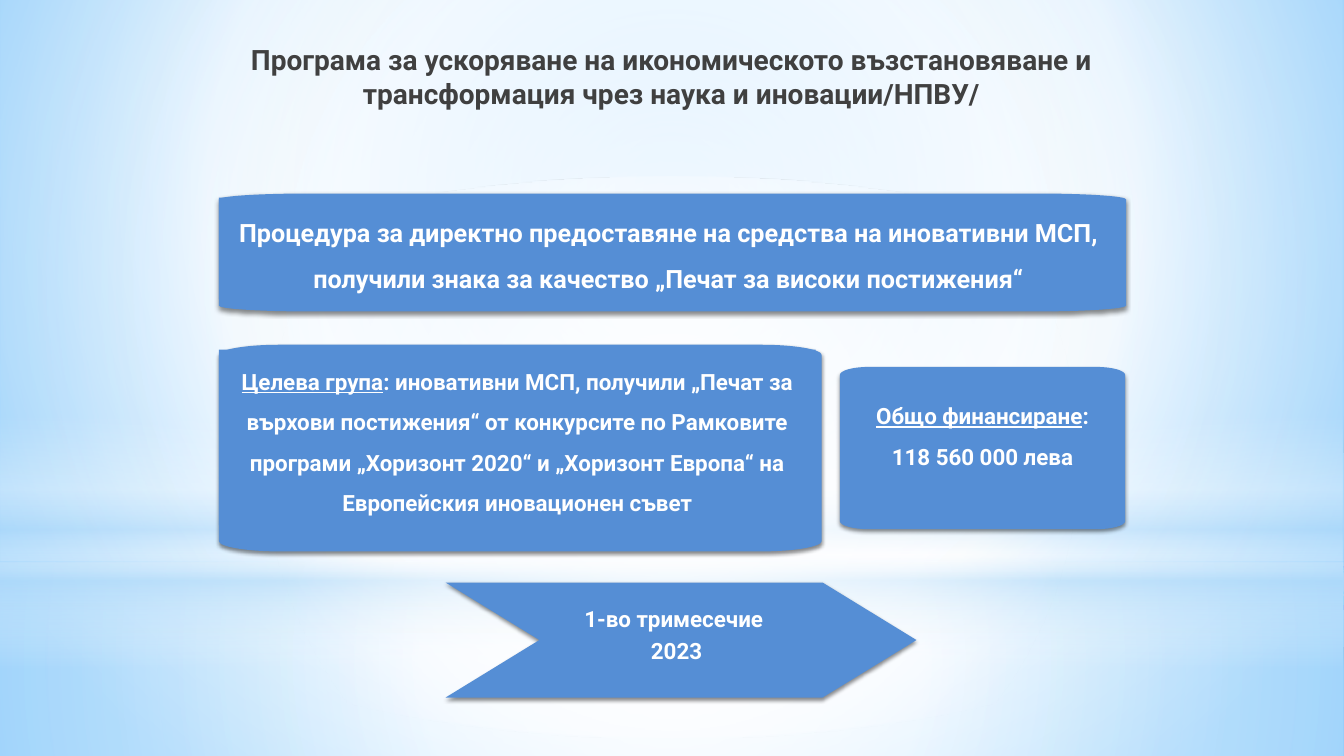
from dataclasses import dataclass

from lxml import etree
from pptx import Presentation
from pptx import util as u
from pptx.dml.color import RGBColor
from pptx.enum import shapes, text
from pptx.oxml import ns


@dataclass(frozen=True)
class Theme:
    font: str = "Roboto"
    title: str = "404040"
    panel: str = "558ED5"
    on_panel: str = "FFFFFF"
    shadow: str = "000000"
    white: str = "FFFFFF"
    mist: str = "B4DCFA"
    sky: str = "9ED5FF"
    deep_sky: str = "5BB9FF"
    title_size: int = 20
    lead_size: int = 18
    body_size: int = 16


THEME = Theme()
SIZE = (13.33, 7.5)
TITLE = ("Програма за ускоряване на икономическото възстановяване и "
         "трансформация чрез наука и иновации/НПВУ/")
TITLE_AREA = (2.33, 0.38, 8.66, 0.79)

# Gradient stops are (position %, colour, opacity %);
# the focus is left, top, right, bottom in %, or None for a vertical blend.
CENTRE = (50, 50, 50, 50)
BACKDROP = ([(0, THEME.sky, 100), (60, THEME.white, 100), (100, THEME.deep_sky, 100)],
            (20, 10, 20, 60))
RECT, OVAL = shapes.MSO_SHAPE.RECTANGLE, shapes.MSO_SHAPE.OVAL
GLOWS = [
    (RECT, (0, 5.58, 13.33, 1.92),
     [(0, THEME.white, 91), (37, THEME.white, 76), (100, THEME.mist, 79)], CENTRE),
    (RECT, (0, 0, 13.33, 5.58),
     [(0, THEME.white, 89), (48, THEME.white, 62), (100, THEME.mist, 79)], CENTRE),
    (RECT, (0, 4.12, 13.33, 2.5),
     [(0, THEME.white, 0), (29, THEME.white, 30), (45, THEME.mist, 40),
      (55, THEME.white, 26), (65, THEME.mist, 60), (100, THEME.white, 0)], None),
    (OVAL, (0, 1.75, 13.33, 5.58),
     [(0, THEME.white, 100), (56, THEME.white, 0)], CENTRE),
]

# Panel area, label area, size, paragraphs of (wording, underlined) runs.
PANELS = [
    ((2.17, 1.92, 9, 1.17), (2.17, 1.96, 8.92, 1.01), THEME.lead_size,
     [[("Процедура за директно предоставяне на средства на иновативни МСП, "
        "получили знака за качество „Печат за високи постижения“", False)]]),
    ((2.17, 3.42, 5.98, 2.05), (2.17, 3.47, 5.92, 1.74), THEME.body_size,
     [[("Целева група", True),
       (": иновативни МСП, получили „Печат за върхови постижения“ от конкурсите "
        "по Рамковите програми „Хоризонт 2020“ и „Хоризонт Европа“ на "
        "Европейския иновационен съвет", False)]]),
    ((8.33, 3.64, 2.83, 1.61), (8.52, 3.81, 2.45, 0.91), THEME.body_size,
     [[("Общо финансиране", True), (":", False)],
      [("118 560 000 лева", False)]]),
]
ARROW_AREA = (4.42, 5.78, 4.67, 1.14)
ARROW_POINT = 0.93
TERM_AREA = (4.67, 5.98, 4.08, 0.68)
TERM = [[("1-во тримесечие ", False)], [("2023", False)]]


def inches(area):
    return [u.Inches(value) for value in area]


def add_colour(parent, colour, opacity):
    node = etree.SubElement(parent, ns.qn("a:srgbClr"), val=colour)
    etree.SubElement(node, ns.qn("a:alpha"), val=str(opacity * 1000))


def blend(fill, root, stops, focus):
    """Swap the solid fill found under root for a gradient."""
    fill.solid()
    fill.fore_color.rgb = RGBColor.from_string(THEME.white)
    solid = root.find(".//" + ns.qn("a:solidFill"))
    gradient = etree.Element(ns.qn("a:gradFill"), rotWithShape="1")
    stop_list = etree.SubElement(gradient, ns.qn("a:gsLst"))
    for position, colour, opacity in stops:
        stop = etree.SubElement(stop_list, ns.qn("a:gs"), pos=str(position * 1000))
        add_colour(stop, colour, opacity)
    if focus is None:
        etree.SubElement(gradient, ns.qn("a:lin"), ang="5400000", scaled="0")
    else:
        way = etree.SubElement(gradient, ns.qn("a:path"), path="circle")
        sides = {side: str(share * 1000) for side, share in zip("ltrb", focus)}
        etree.SubElement(way, ns.qn("a:fillToRect"), **sides)
    solid.getparent().replace(solid, gradient)


def add_glows(page):
    """Put the glows on the slide master, behind its placeholders."""
    master_tree = page.slide_layout.slide_master.shapes.element
    for depth, (kind, area, stops, focus) in enumerate(GLOWS):
        glow = page.shapes.add_shape(kind, *inches(area))
        glow.shadow.inherit = False
        glow.line.fill.background()
        blend(glow.fill, glow.element.spPr, stops, focus)
        glow.element.nvSpPr.cNvPr.set("id", str(100 + depth))
        master_tree.insert(2 + depth, glow.element)


def cut_corner_outline(left, top, width, height):
    """Box whose corners are cut at 10% of its width and 5% of its height."""
    rx, ry = width * 0.1, height * 0.05
    right, bottom = left + width, top + height
    return [(left, top + ry), (left + rx, top), (right - rx, top), (right, top + ry),
            (right, bottom - ry), (right - rx, bottom), (left + rx, bottom),
            (left, bottom - ry)]


def arrow_outline(left, top, width, height):
    right, middle, bottom = left + width, top + height / 2, top + height
    shoulder = right - ARROW_POINT
    return [(left, top), (shoulder, top), (right, middle), (shoulder, bottom),
            (left, bottom), (left + ARROW_POINT, middle)]


def round_corners(panel):
    """Turn every other edge of a cut-corner box into a quarter ellipse."""
    points = [(int(node.get("x")), int(node.get("y")))
              for node in panel.element.iter(ns.qn("a:pt"))]
    edges = list(panel.element.iter(ns.qn("a:lnTo")))
    for index in range(0, len(edges), 2):
        start, end = points[index], points[index + 1]
        corner = (end[0], start[1]) if index % 4 else (start[0], end[1])
        controls = [tuple(round(p + 0.55 * (c - p)) for p, c in zip(point, corner))
                    for point in (start, end)]
        curve = etree.Element(ns.qn("a:cubicBezTo"))
        for x, y in (*controls, end):
            etree.SubElement(curve, ns.qn("a:pt"), x=str(x), y=str(y))
        edges[index].getparent().replace(edges[index], curve)


def add_panel(parts, outline):
    points = [inches(point) for point in outline]
    builder = parts.build_freeform(*points[0])
    builder.add_line_segments(points[1:], close=True)
    panel = builder.convert_to_shape()
    panel.fill.solid()
    panel.fill.fore_color.rgb = RGBColor.from_string(THEME.panel)
    panel.line.fill.background()
    panel.shadow.inherit = False
    effects = panel.element.spPr.find(ns.qn("a:effectLst"))
    shadow = etree.SubElement(effects, ns.qn("a:outerShdw"), blurRad=str(u.Pt(3.1)),
                              dist=str(u.Pt(1.8)), dir="5400000", rotWithShape="0")
    add_colour(shadow, THEME.shadow, 45)
    return panel


def style(span, size, colour):
    span.font.name = THEME.font
    span.font.size = u.Pt(size)
    span.font.bold = True
    span.font.color.rgb = RGBColor.from_string(colour)


def add_label(parts, area, paragraphs, size, spacing, after=0):
    box = parts.add_textbox(*inches(area))
    frame = box.text_frame
    frame.word_wrap = True
    for index, runs in enumerate(paragraphs):
        para = frame.add_paragraph() if index else frame.paragraphs[0]
        para.alignment = text.PP_ALIGN.CENTER
        para.line_spacing = spacing
        para.space_after = u.Pt(after)
        for wording, underlined in runs:
            span = para.add_run()
            span.text = wording
            style(span, size, THEME.on_panel)
            span.font.underline = underlined
    return box


def add_title(page):
    title = page.shapes.title
    title.left, title.top, title.width, title.height = inches(TITLE_AREA)
    frame = title.text_frame
    frame.text = TITLE
    frame.word_wrap = True
    frame.auto_size = text.MSO_AUTO_SIZE.NONE
    frame.vertical_anchor = text.MSO_ANCHOR.MIDDLE
    frame.margin_bottom = u.Inches(0.09)
    para = frame.paragraphs[0]
    para.alignment = text.PP_ALIGN.CENTER
    style(para.runs[0], THEME.title_size, THEME.title)


def main():
    deck = Presentation()
    deck.slide_width, deck.slide_height = inches(SIZE)
    page = deck.slides.add_slide(deck.slide_layouts[5])
    blend(page.background.fill, page.element, *BACKDROP)
    add_glows(page)
    add_title(page)
    add_panel(page.shapes, arrow_outline(*ARROW_AREA))
    for area, label_area, size, paragraphs in PANELS:
        group = page.shapes.add_group_shape()
        round_corners(add_panel(group.shapes, cut_corner_outline(*area)))
        label = add_label(group.shapes, label_area, paragraphs, size, 1.5)
        label.fill.solid()
        label.fill.fore_color.rgb = RGBColor.from_string(THEME.panel)
    add_label(page.shapes, TERM_AREA, TERM, THEME.body_size, 0.9, after=5.6)
    deck.save("out.pptx")


if __name__ == "__main__":
    main()
